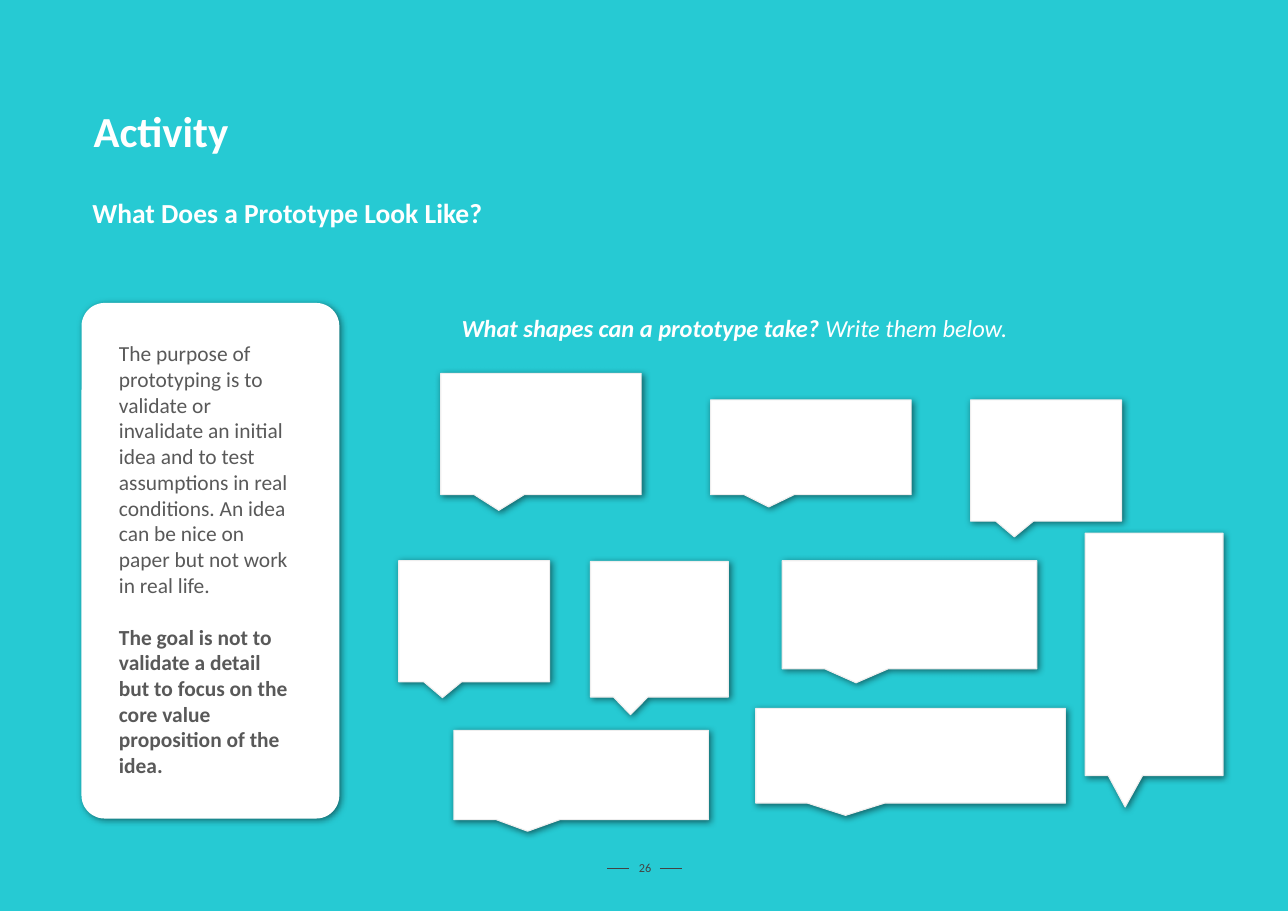
from pptx import Presentation
from pptx.dml.color import RGBColor
from pptx.enum.shapes import MSO_CONNECTOR, MSO_SHAPE
from pptx.enum.text import MSO_ANCHOR, MSO_AUTO_SIZE, PP_ALIGN
from pptx.oxml import parse_xml
from pptx.oxml.ns import nsdecls, qn
from pptx.util import Pt

CARD = MSO_SHAPE.ROUNDED_RECTANGLE
CALLOUT = MSO_SHAPE.ROUNDED_RECTANGULAR_CALLOUT
STRAIGHT = MSO_CONNECTOR.STRAIGHT
TOP, MIDDLE = MSO_ANCHOR.TOP, MSO_ANCHOR.MIDDLE
GROW = MSO_AUTO_SIZE.SHAPE_TO_FIT_TEXT
LEFT, CENTER = PP_ALIGN.LEFT, PP_ALIGN.CENTER

COLORS = {
    "background": "26CAD3",
    "white": "FFFFFF",
    "outline": "EEEEEE",
    "body": "595959",
    "footer": "434343",
    "shadow": "000000",
}
FONT = "Calibri"

CARD_TEXTS = [
    ("The purpose of prototyping is to validate or invalidate an initial idea "
     "and to test assumptions in real conditions. An idea can be nice on paper "
     "but not work in real life.", False),
    ("The goal is not to validate a detail but to focus on the core value "
     "proposition of the idea.", True),
]
BUBBLES = [
    (288, 244.1, 131, 79.2),
    (260.6, 366.5, 98.6, 79.2),
    (296.6, 477.4, 166.3, 58.3),
    (385.9, 367, 90, 88.6),
    (464.4, 261.4, 131, 61.9),
    (634.3, 261.4, 98.6, 79.2),
    (493.9, 463, 202.3, 61.9),
    (511.2, 366.5, 166.3, 70.6),
    (709.2, 348.5, 90, 158.4),
]


class ActivityPage:
    """Draws styled elements on one slide, with lengths in points."""

    def __init__(self, deck):
        self.page = deck.slides.add_slide(deck.slide_layouts[6])
        fill = self.page.background.fill
        fill.solid()
        fill.fore_color.rgb = self.color("background")

    def color(self, name):
        return RGBColor.from_string(COLORS[name])

    def style(self, font, size, color, bold=False, italic=False):
        font.name, font.size = FONT, Pt(size)
        font.bold, font.italic = bold, italic
        font.color.rgb = self.color(color)

    def text_box(self, area, inset=(7.2, 7.2), anchor=TOP):
        box = self.page.shapes.add_textbox(*map(Pt, area))
        frame = box.text_frame
        frame.word_wrap = True
        frame.vertical_anchor = anchor
        frame.margin_left = frame.margin_right = Pt(inset[0])
        frame.margin_top = frame.margin_bottom = Pt(inset[1])
        return frame

    def label(self, area, text, size, color="white", bold=True, align=LEFT,
              spacing=1.0, **layout):
        para = self.text_box(area, **layout).paragraphs[0]
        para.text = text
        para.alignment = align
        para.line_spacing = spacing
        self.style(para.font, size, color, bold)

    def prompt(self, area, spans, size):
        para = self.text_box(area, inset=(6.5, 6.5)).paragraphs[0]
        for text, bold in spans:
            span = para.add_run()
            span.text = text
            self.style(span.font, size, "white", bold, italic=True)

    def body(self, area, texts, size, gap):
        frame = self.text_box(area)
        frame.auto_size = GROW
        for index, (text, bold) in enumerate(texts):
            para = frame.add_paragraph() if index else frame.paragraphs[0]
            para.text = text
            para.space_before = Pt(gap if index else 0)
            self.style(para.font, size, "body", bold)

    def panel(self, kind, area, adjustments, opacity, angle, outline=None):
        shape = self.page.shapes.add_shape(kind, *map(Pt, area))
        for index, value in enumerate(adjustments):
            shape.adjustments[index] = value
        shape.fill.solid()
        shape.fill.fore_color.rgb = self.color("white")
        if outline:
            shape.line.color.rgb = self.color(outline)
            shape.line.width = Pt(0.75)
        else:
            shape.line.fill.background()
        shape.shadow.inherit = False
        effects = shape._element.spPr.find(qn("a:effectLst"))
        effects.append(parse_xml(
            f'<a:outerShdw {nsdecls("a")} blurRad="{Pt(4.5)}" dist="{Pt(1.5)}" '
            f'dir="{angle * 60000}" algn="bl" rotWithShape="0">'
            f'<a:srgbClr val="{COLORS["shadow"]}">'
            f'<a:alpha val="{opacity * 1000}"/></a:srgbClr></a:outerShdw>'))

    def dash(self, left, top, length):
        line = self.page.shapes.add_connector(
            STRAIGHT, Pt(left), Pt(top), Pt(left + length), Pt(top))
        line.line.color.rgb = self.color("footer")
        line.line.width = Pt(0.75)
        line._element.spPr.append(parse_xml(f'<a:effectLst {nsdecls("a")}/>'))


def main():
    deck = Presentation()
    deck.slide_width, deck.slide_height = Pt(841.68), Pt(595.44)
    page = ActivityPage(deck)

    page.label((409, 558.7, 25.2, 18.7), "26", 8, "footer", bold=False,
               align=CENTER, spacing=0.8, anchor=MIDDLE)
    for left in (396.7, 431.3):
        page.dash(left, 567.8, 14.4)

    page.panel(CARD, (53.3, 198, 168.5, 337), [0.09], 49, 44)
    page.body((70.6, 215.3, 128.2, 303.1), CARD_TEXTS, 14, gap=17)

    page.prompt((295.2, 198, 493.9, 39.6),
                [("What shapes can a prototype take? ", True),
                 ("Write them below.", False)], 16)
    page.label((53.3, 59.8, 236.2, 55.4), "Activity", 28, spacing=0.86,
               inset=(7.9, 4.3), anchor=MIDDLE)
    page.label((53.3, 121, 292.3, 37.4), "What Does a Prototype Look Like?", 18)

    for area in BUBBLES:
        page.panel(CALLOUT, area, [-0.21, 0.63, 0], 50, 46, "outline")

    deck.save("out.pptx")


if __name__ == "__main__":
    main()
